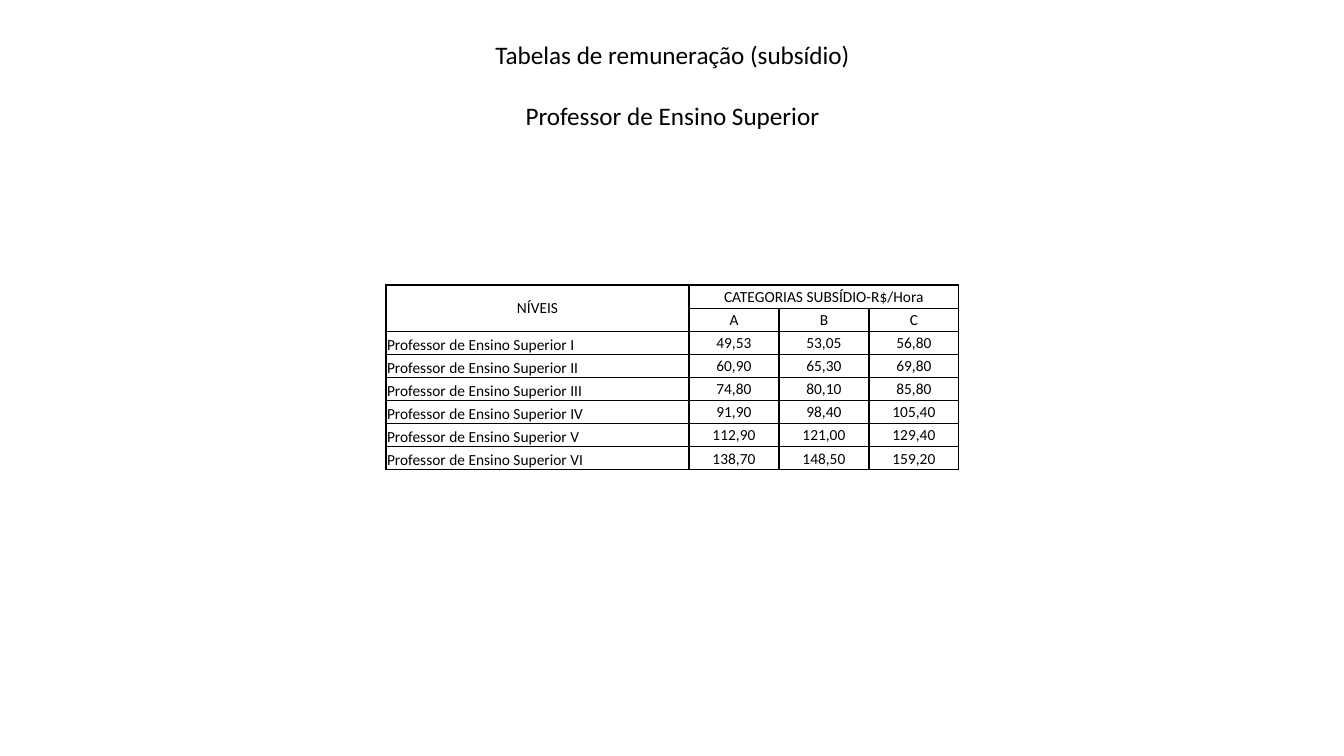
from typing import NamedTuple

import pptx
import pptx.dml.color
import pptx.enum.text
import pptx.oxml
import pptx.oxml.ns
import pptx.util

EMU_PER_PX = 914400 / 100.8
FONT = "Calibri"
BLACK = "000000"
ALIGN = pptx.enum.text.PP_ALIGN
ANCHOR = pptx.enum.text.MSO_ANCHOR


class Box(NamedTuple):
    left: int
    top: int
    width: int
    height: int


class Level(NamedTuple):
    name: str
    rates: tuple[str, ...]


TITLE_BOX = Box(201, 34, 943, 102)
TITLE_LINES = ("Tabelas de remuneração (subsídio)", "Professor de Ensino Superior")
TABLE_BOX = Box(386, 285, 573, 185)
COLUMN_WIDTHS = (303, 90, 90, 90)
CATEGORIES = ("A", "B", "C")
LEVELS = (
    Level("I", ("49,53", "53,05", "56,80")),
    Level("II", ("60,90", "65,30", "69,80")),
    Level("III", ("74,80", "80,10", "85,80")),
    Level("IV", ("91,90", "98,40", "105,40")),
    Level("V", ("112,90", "121,00", "129,40")),
    Level("VI", ("138,70", "148,50", "159,20")),
)


def px(n: int) -> pptx.util.Emu:
    return pptx.util.Emu(round(n * EMU_PER_PX))


def rgb(color: str) -> pptx.dml.color.RGBColor:
    return pptx.dml.color.RGBColor.from_string(color)


def format_paragraph(p, size: int, align) -> None:
    p.alignment = align
    for r in p.runs:
        r.font.name = FONT
        r.font.size = pptx.util.Pt(size)
        r.font.bold = False
        r.font.color.rgb = rgb(BLACK)


def add_borders(cell, color: str = BLACK, width: int = 1) -> None:
    tc_pr = cell._tc.get_or_add_tcPr()
    for side in "LRTB":
        tc_pr.append(pptx.oxml.parse_xml(
            f'<a:ln{side} {pptx.oxml.ns.nsdecls("a")} w="{pptx.util.Pt(width)}">'
            f'<a:solidFill><a:srgbClr val="{color}"/></a:solidFill></a:ln{side}>'))


def format_cell(cell, text: str, is_name: bool) -> None:
    cell.margin_left = cell.margin_right = cell.margin_top = px(1)
    cell.margin_bottom = 0
    cell.vertical_anchor = ANCHOR.BOTTOM if is_name else ANCHOR.MIDDLE
    add_borders(cell)
    cell.fill.background()
    cell.text_frame.text = text
    p = cell.text_frame.paragraphs[0]
    format_paragraph(p, 11, ALIGN.LEFT if is_name else ALIGN.CENTER)
    if not text:
        p.font.size = pptx.util.Pt(11)


def fill_title(title) -> None:
    title.left, title.top, title.width, title.height = map(px, TITLE_BOX)
    tf = title.text_frame
    tf.text = "\n".join(TITLE_LINES)
    tf.word_wrap = True
    tf.auto_size = pptx.enum.text.MSO_AUTO_SIZE.SHAPE_TO_FIT_TEXT
    tf.vertical_anchor = ANCHOR.TOP
    for p in tf.paragraphs:
        format_paragraph(p, 18, ALIGN.CENTER)
    tf.paragraphs[1].space_before = pptx.util.Pt(22)


def add_pay_table(s) -> None:
    rows = [("NÍVEIS", "CATEGORIAS SUBSÍDIO-R$/Hora", "", ""), ("", *CATEGORIES)]
    header_count = len(rows)
    rows += [(f"Professor de Ensino Superior {level.name}", *level.rates) for level in LEVELS]

    table = s.shapes.add_table(len(rows), len(COLUMN_WIDTHS), *map(px, TABLE_BOX)).table
    table.first_row = table.horz_banding = False
    for column, width in zip(table.columns, COLUMN_WIDTHS):
        column.width = px(width)
    for i, texts in enumerate(rows):
        table.rows[i].height = px(TABLE_BOX.height) // len(rows)
        for j, text in enumerate(texts):
            format_cell(table.cell(i, j), text, j == 0 and i >= header_count)
    table.cell(0, 0).merge(table.cell(1, 0))
    table.cell(0, 1).merge(table.cell(0, len(CATEGORIES)))


def main() -> None:
    prs = pptx.Presentation()
    prs.slide_width, prs.slide_height = px(1344), px(756)
    s = prs.slides.add_slide(prs.slide_layouts.get_by_name("Title Only"))
    fill_title(s.shapes.title)
    add_pay_table(s)
    prs.save("out.pptx")


if __name__ == "__main__":
    main()
